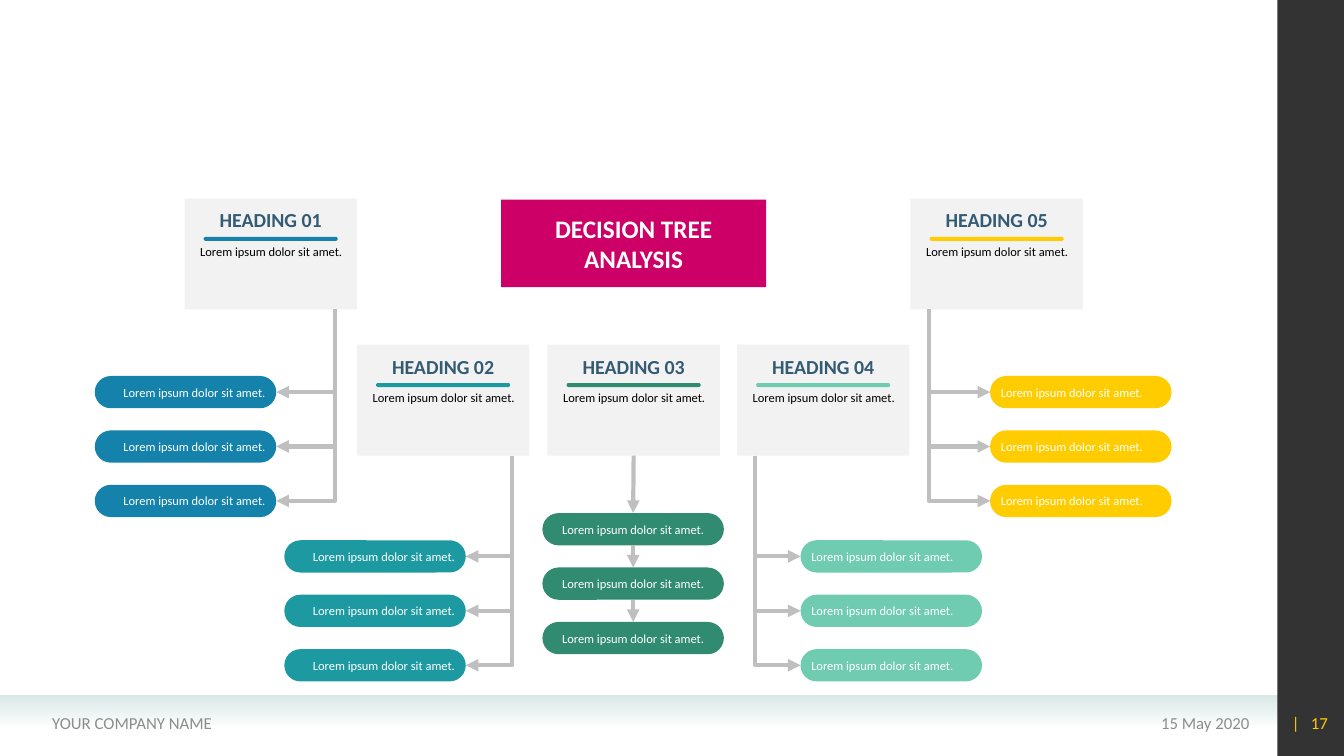
"""Build a decision tree slide with five headed branches."""
from lxml import etree
from pptx import Presentation
from pptx import util as u
from pptx.dml.color import RGBColor
from pptx.enum import shapes, text
from pptx.oxml import ns

WHITE = RGBColor(0xFF, 0xFF, 0xFF)
BLACK = RGBColor(0x00, 0x00, 0x00)
MAGENTA = RGBColor(0xCC, 0x00, 0x66)
CARD_GREY = RGBColor(0xF2, 0xF2, 0xF2)
ARROW_GREY = RGBColor(0xBF, 0xBF, 0xBF)
FOOTER_GREY = RGBColor(0x8C, 0x8C, 0x8C)
MIST = RGBColor(0xD9, 0xE9, 0xE8)
SLATE = RGBColor(0x33, 0x5B, 0x74)
BLUE = RGBColor(0x14, 0x82, 0xAB)
TEAL = RGBColor(0x1D, 0x9A, 0xA1)
GREEN = RGBColor(0x31, 0x8B, 0x71)
MINT = RGBColor(0x70, 0xCC, 0xB1)
YELLOW = RGBColor(0xFF, 0xCC, 0x00)

LEFT, CENTER, RIGHT = text.PP_ALIGN.LEFT, text.PP_ALIGN.CENTER, text.PP_ALIGN.RIGHT
TOP, MIDDLE, BOTTOM = text.MSO_ANCHOR.TOP, text.MSO_ANCHOR.MIDDLE, text.MSO_ANCHOR.BOTTOM
RECT, ROUND = shapes.MSO_SHAPE.RECTANGLE, shapes.MSO_SHAPE.ROUNDED_RECTANGLE
STRAIGHT, ELBOW = shapes.MSO_CONNECTOR.STRAIGHT, shapes.MSO_CONNECTOR.ELBOW

LOREM = "Lorem ipsum dolor sit amet."
CARD_W, CARD_H = 1.71, 1.1
PILL_W, PILL_H, PILL_PITCH = 1.8, 0.32, 0.54
SMALL = {"size": u.Pt(8.9), "color": WHITE}
FOOTER = {"size": u.Pt(12), "color": FOOTER_GREY}

BRANCHES = [
    {"heading": "HEADING 01", "color": BLUE, "card": (1.83, 1.97),
     "pills": (0.94, 3.73), "trunk": 3.32, "align": RIGHT},
    {"heading": "HEADING 02", "color": TEAL, "card": (3.54, 3.42),
     "pills": (2.82, 5.36), "trunk": 5.08, "align": RIGHT},
    {"heading": "HEADING 03", "color": GREEN, "card": (5.43, 3.42),
     "pills": (5.38, 5.09), "trunk": None, "align": CENTER},
    {"heading": "HEADING 04", "color": MINT, "card": (7.31, 3.42),
     "pills": (7.94, 5.36), "trunk": 7.49, "align": LEFT},
    {"heading": "HEADING 05", "color": YELLOW, "card": (9.03, 1.97),
     "pills": (9.82, 3.73), "trunk": 9.21, "align": LEFT},
]


def inches(*lengths):
    """Convert lengths in inches to slide units."""
    return [u.Inches(length) for length in lengths]


def add_block(slide, kind, box, color, rounding=None):
    """Add a flat preset shape filled with one colour."""
    block = slide.shapes.add_shape(kind, *inches(*box))
    block.shadow.inherit = False
    block.fill.solid()
    block.fill.fore_color.rgb = color
    block.line.fill.background()
    if rounding is not None:
        block.adjustments[0] = rounding
    return block


def write(frame, lines, style, align=LEFT, anchor=MIDDLE, margins=(0.1, 0.05), wrap=True):
    """Fill a text frame with one paragraph per line."""
    across, down = inches(*margins)
    layout = {"word_wrap": wrap, "vertical_anchor": anchor, "margin_left": across,
              "margin_right": across, "margin_top": down, "margin_bottom": down}
    for name, value in layout.items():
        setattr(frame, name, value)
    font_values = {"name": "Calibri", "size": style["size"], "bold": style.get("bold", False)}
    for index, line in enumerate(lines):
        paragraph = frame.add_paragraph() if index else frame.paragraphs[0]
        paragraph.alignment = align
        run = paragraph.add_run()
        run.text = line
        for name, value in font_values.items():
            setattr(run.font, name, value)
        run.font.color.rgb = style["color"]


def add_label(slide, box, line, style, **layout):
    """Add a text box holding one line."""
    label = slide.shapes.add_textbox(*inches(*box))
    write(label.text_frame, [line], style, **layout)


def set_alpha(color_element, percent):
    """Give a colour element an opacity in percent."""
    etree.SubElement(color_element, ns.qn("a:alpha")).set("val", str(percent * 1000))


def style_arrow(arrow):
    """Give a connector a grey line with an arrowhead and no shadow."""
    arrow.line.color.rgb = ARROW_GREY
    arrow.line.width = u.Pt(3)
    properties = arrow._element.spPr
    etree.SubElement(properties.find(ns.qn("a:ln")), ns.qn("a:tailEnd")).set("type", "triangle")
    etree.SubElement(properties, ns.qn("a:effectLst"))


def add_elbow(slide, start, end):
    """Add an arrow that runs down from start and then sideways to end."""
    (x0, y0), (x1, y1) = start, end
    length, depth = y1 - y0, abs(x1 - x0)
    left, top = (x0 + x1 - length) / 2, (y0 + y1 - depth) / 2
    elbow = slide.shapes.add_connector(ELBOW, *inches(left, top, left + length, top + depth))
    properties = elbow._element.spPr
    properties.find(ns.qn("a:prstGeom")).set("prst", "bentConnector2")
    rightward = {"rot": "16200000", "flipH": "1"}
    for name, value in (rightward if x1 > x0 else {"rot": "5400000"}).items():
        properties.find(ns.qn("a:xfrm")).set(name, value)
    style_arrow(elbow)


def add_drop(slide, upper, lower):
    """Join the bottom of one shape to the top of the next with an arrow."""
    drop = slide.shapes.add_connector(STRAIGHT, 0, 0, 0, 0)
    drop.begin_connect(upper, 2)
    drop.end_connect(lower, 0)
    style_arrow(drop)


def add_card(slide, x, y, heading, color):
    """Add a heading card with its coloured rule and body; return the card."""
    card = add_block(slide, RECT, (x, y, CARD_W, CARD_H), CARD_GREY)
    add_label(slide, (x + 0.19, y + 0.04, 1.33, 0.34), heading,
              {"size": u.Pt(14.2), "bold": True, "color": SLATE},
              align=CENTER, anchor=BOTTOM, wrap=False)
    add_block(slide, ROUND, (x + 0.19, y + 0.38, 1.33, 0.04), color, 0.5)
    add_label(slide, (x + 0.05, y + 0.43, 1.62, 0.19), LOREM, {**SMALL, "color": BLACK},
              align=CENTER, anchor=TOP, margins=(0.04, 0.02))
    return card


def add_branch(slide, heading, color, card, pills, trunk, align):
    """Add one card, its three pills and the arrows between them."""
    upper = add_card(slide, *card, heading, color)
    x, first_y = pills
    for row in range(3):
        y = first_y + row * PILL_PITCH
        pill = add_block(slide, ROUND, (x, y, PILL_W, PILL_H), color, 0.5)
        write(pill.text_frame, [LOREM], SMALL, align=align, margins=(0.06, 0.02))
        if trunk is None:
            add_drop(slide, upper, pill)
            upper = pill
        else:
            near_side = x if trunk < x else x + PILL_W
            add_elbow(slide, (trunk, card[1] + CARD_H), (near_side, y + PILL_H / 2))


def add_frame(slide, width, height):
    """Add the footer band, the dark side panel and the footer texts."""
    panel_x, footer_y, footer_h = width - 0.66, 6.97, 0.4
    band = add_block(slide, RECT, (0, 6.9, panel_x, 0.31), MIST)
    band.fill.gradient()
    band.fill.gradient_angle = 270
    for stop, position in zip(band.fill.gradient_stops, (0, 1)):
        stop.color.rgb = MIST
        stop.position = position
    set_alpha(list(band._element.spPr.iter(ns.qn("a:srgbClr")))[-1], 0)
    panel = add_block(slide, RECT, (panel_x, 0, width - panel_x, height), BLACK)
    set_alpha(next(panel._element.spPr.iter(ns.qn("a:srgbClr"))), 80)
    add_label(slide, (9.1, footer_y, 3.39, footer_h), "15 May 2020", FOOTER, align=RIGHT)
    add_label(slide, (0.42, footer_y, 4.9, footer_h), "YOUR COMPANY NAME", FOOTER)
    add_label(slide, (12.6, footer_y, 0.67, footer_h), "|   17",
              {**FOOTER, "color": YELLOW}, align=RIGHT)


def add_title(slide, box):
    """Add the magenta title block."""
    title = add_block(slide, ROUND, box, MAGENTA, 0)
    write(title.text_frame, ["DECISION TREE", "ANALYSIS"],
          {"size": u.Pt(18), "bold": True, "color": WHITE}, align=CENTER)


def main():
    """Build and save the slide."""
    width, height = 13.33, 7.5
    deck = Presentation()
    deck.slide_width, deck.slide_height = inches(width, height)
    slide = deck.slides.add_slide(deck.slide_layouts[6])
    add_frame(slide, width, height)
    add_title(slide, (4.97, 1.98, 2.63, 0.87))
    for branch in BRANCHES:
        add_branch(slide, **branch)
    deck.save("out.pptx")


if __name__ == "__main__":
    main()
